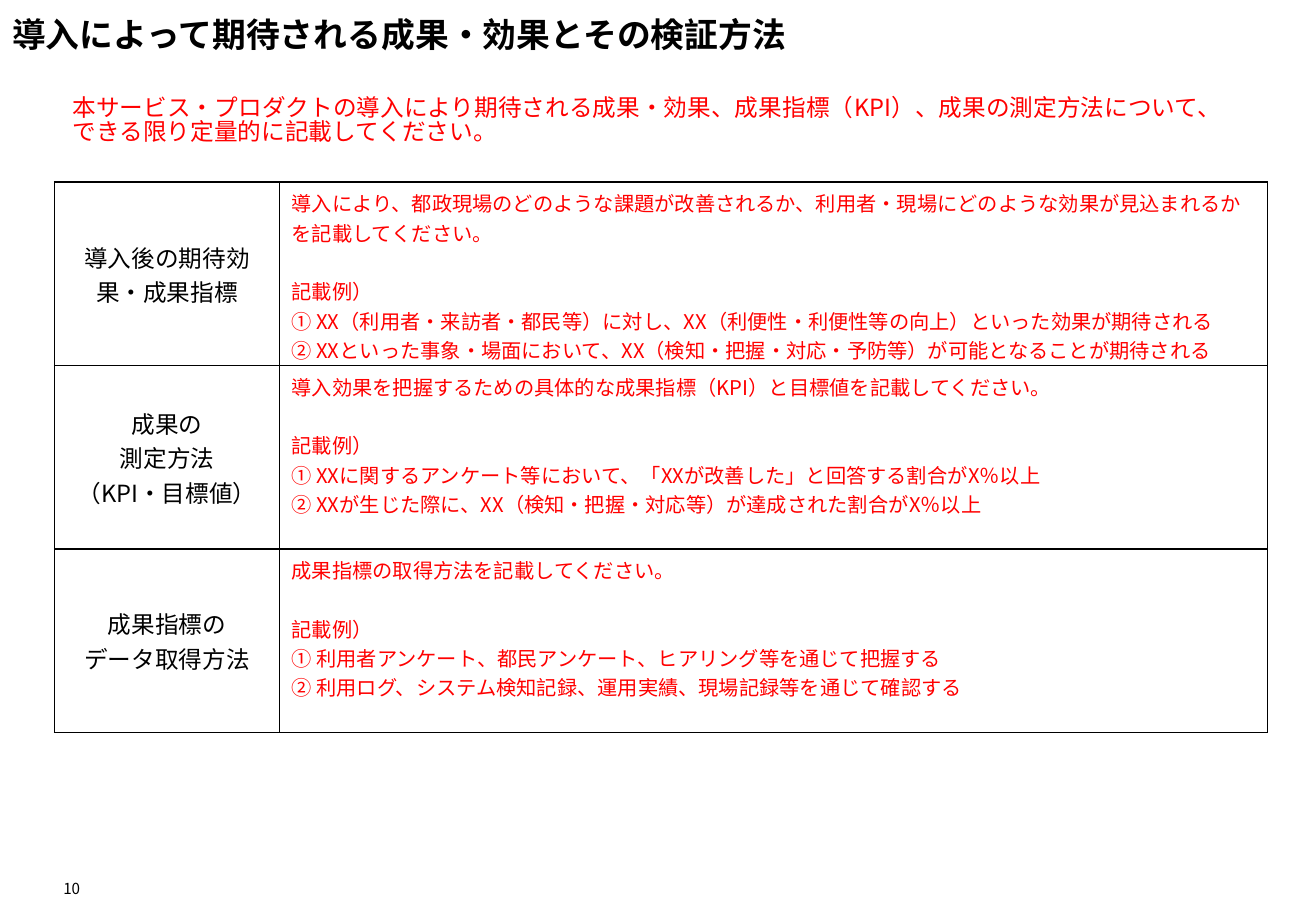
import pptx
import pptx.util
import pptx.dml.color
import pptx.enum.text
import pptx.oxml
import pptx.oxml.ns

Inches, Pt = pptx.util.Inches, pptx.util.Pt
RGBColor = pptx.dml.color.RGBColor
ALIGN = pptx.enum.text.PP_ALIGN
ANCHOR = pptx.enum.text.MSO_ANCHOR

BLACK = RGBColor(0, 0, 0)
RED = RGBColor(255, 0, 0)
WHITE = RGBColor(255, 255, 255)
FONT = "Noto Sans CJK JP"
EXAMPLE = "記載例）"

TITLE = "導入によって期待される成果・効果とその検証方法"
INTRO = ("本サービス・プロダクトの導入により期待される成果・効果、成果指標（KPI）、"
         "成果の測定方法について、できる限り定量的に記載してください。")
# Each row: heading paragraphs, instruction, examples
ROWS = [
    (["導入後の期待効果・成果指標"],
     "導入により、都政現場のどのような課題が改善されるか、"
     "利用者・現場にどのような効果が見込まれるかを記載してください。",
     ["① XX（利用者・来訪者・都民等）に対し、XX（利便性・利便性等の向上）といった効果が期待される",
      "② XXといった事象・場面において、XX（検知・把握・対応・予防等）が可能となることが期待される"]),
    (["成果の\n測定方法", "（KPI・目標値）"],
     "導入効果を把握するための具体的な成果指標（KPI）と目標値を記載してください。",
     ["① XXに関するアンケート等において、「XXが改善した」と回答する割合がX％以上",
      "② XXが生じた際に、XX（検知・把握・対応等）が達成された割合がX％以上"]),
    (["成果指標の", "データ取得方法"],
     "成果指標の取得方法を記載してください。",
     ["① 利用者アンケート、都民アンケート、ヒアリング等を通じて把握する",
      "② 利用ログ、システム検知記録、運用実績、現場記録等を通じて確認する"]),
]


def write(frame, lines, size, color, align=ALIGN.LEFT, bold=False, spacing=None):
    """Fill a text frame, one paragraph a line; a newline breaks within it."""
    for i, line in enumerate(lines):
        para = frame.paragraphs[0] if i == 0 else frame.add_paragraph()
        para.alignment = align
        if spacing:
            para.line_spacing = spacing
        if line == EXAMPLE:
            para.space_before = Pt(17.4)
        for j, part in enumerate(line.split("\n")):
            if j:
                para.add_line_break()
            run = para.add_run()
            run.text = part
            font = run.font
            font.name, font.size, font.bold = FONT, Pt(size), bold
            font.color.rgb = color
            east = pptx.oxml.parse_xml(
                f'<a:ea {pptx.oxml.ns.nsdecls("a")} typeface="{FONT}"/>')
            run._r.get_or_add_rPr().find(pptx.oxml.ns.qn("a:latin")).addnext(east)


def place(shape, box):
    shape.left, shape.top, shape.width, shape.height = map(Inches, box)


def add_title(slide, box):
    title = slide.shapes.title
    place(title, box)
    frame = title.text_frame
    frame.auto_size = pptx.enum.text.MSO_AUTO_SIZE.NONE
    frame.vertical_anchor = ANCHOR.MIDDLE
    write(frame, [TITLE], 20, BLACK, bold=True, spacing=0.9)


def add_intro(slide, box):
    frame = slide.shapes.add_textbox(*map(Inches, box)).text_frame
    frame.word_wrap = True
    write(frame, [INTRO], 14, RED, spacing=0.85)


def add_page(slide, box):
    frame = slide.shapes.add_textbox(*map(Inches, box)).text_frame
    frame.margin_left = frame.margin_right = 0
    frame.margin_top = frame.margin_bottom = 0
    frame.word_wrap = False
    frame.vertical_anchor = ANCHOR.BOTTOM
    write(frame, ["10"], 9, BLACK, ALIGN.RIGHT)


def style_cell(cell):
    """Give a cell thin black borders and a white fill."""
    props = cell._tc.get_or_add_tcPr()
    for side in "LRTB":
        props.append(pptx.oxml.parse_xml(
            f'<a:ln{side} {pptx.oxml.ns.nsdecls("a")} w="{Pt(1)}"><a:solidFill>'
            f'<a:srgbClr val="{BLACK}"/></a:solidFill></a:ln{side}>'))
    cell.fill.solid()
    cell.fill.fore_color.rgb = WHITE


def add_grid(slide, box):
    table = slide.shapes.add_table(len(ROWS), 2, *map(Inches, box)).table
    table.first_row = table.horz_banding = False
    head_width = 1.85
    table.columns[0].width = Inches(head_width)
    table.columns[1].width = Inches(box[2] - head_width)
    for i, (heading, guide, samples) in enumerate(ROWS):
        head, body = table.cell(i, 0), table.cell(i, 1)
        for cell in (head, body):
            style_cell(cell)
        head.vertical_anchor = ANCHOR.MIDDLE
        write(head.text_frame, heading, 14, BLACK, ALIGN.CENTER)
        write(body.text_frame, [guide, EXAMPLE, *samples], 12, RED)


def main():
    deck = pptx.Presentation()
    deck.slide_width, deck.slide_height = Inches(10.83), Inches(7.5)
    slide = deck.slides.add_slide(deck.slide_layouts[5])
    add_title(slide, (0, 0, 9.34, 0.61))
    add_intro(slide, (0.5, 0.75, 9.84, 0.61))
    add_grid(slide, (0.45, 1.5, 9.98, 4.53))
    add_page(slide, (0.46, 7.2, 0.2, 0.19))
    deck.save("out.pptx")


if __name__ == "__main__":
    main()
